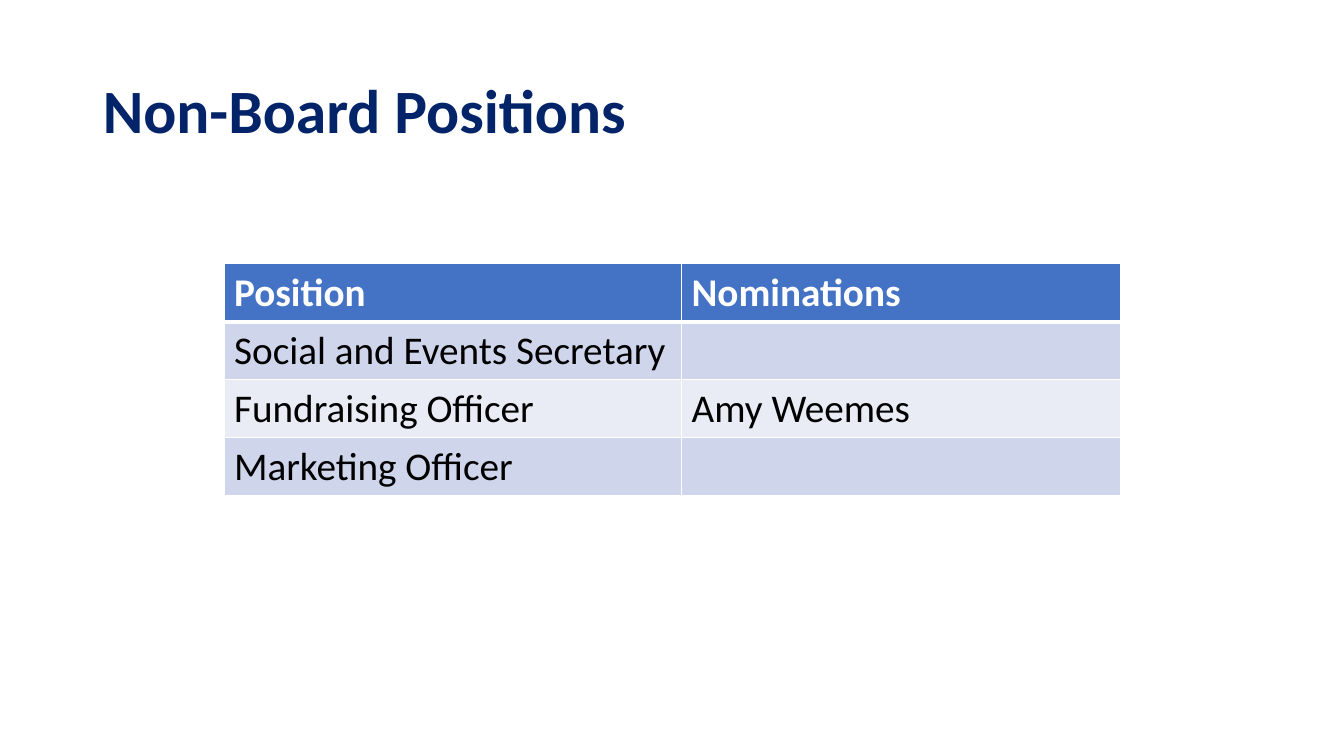
from lxml.etree import SubElement
from pptx import Presentation
from pptx.dml.color import RGBColor
from pptx.enum.text import MSO_ANCHOR, PP_ALIGN
from pptx.oxml.ns import qn
from pptx.util import Inches, Pt

NAVY = RGBColor(0x03, 0x24, 0x69)
BLUE = RGBColor(0x44, 0x72, 0xC4)
BAND_DARK = RGBColor(0xCF, 0xD5, 0xEA)
BAND_LIGHT = RGBColor(0xE9, 0xEB, 0xF5)
WHITE = RGBColor(0xFF, 0xFF, 0xFF)
BLACK = RGBColor(0x00, 0x00, 0x00)

POSITIONS = [
    ("Position", "Nominations"),
    ("Social and Events Secretary", ""),
    ("Fundraising Officer", "Amy Weemes"),
    ("Marketing Officer", ""),
]


class SlideBuilder:
    """Style and current slide; lengths are percentages of the slide's size."""

    font_name = "Calibri"
    title_size = 44
    table_size = 28

    def __init__(self, prs):
        self.width, self.height = prs.slide_width, prs.slide_height
        self.slide = prs.slides.add_slide(prs.slide_layouts[5])

    def x(self, share):
        return int(self.width * share / 100)

    def y(self, share):
        return int(self.height * share / 100)

    def style(self, p, size, color, bold):
        p.alignment = PP_ALIGN.LEFT
        p.font.name = self.font_name
        p.font.size = Pt(size)
        p.font.bold = bold
        p.font.color.rgb = color

    def title(self, text, left, top, width, height):
        sp = self.slide.shapes.title
        sp.left, sp.top = self.x(left), self.y(top)
        sp.width, sp.height = self.x(width), self.y(height)
        tf = sp.text_frame
        tf.text = text
        tf.word_wrap = True
        tf.vertical_anchor = MSO_ANCHOR.MIDDLE
        p = tf.paragraphs[0]
        p.line_spacing = 0.9
        self.style(p, self.title_size, NAVY, True)

    def borders(self, cell, **widths):
        tc_pr = cell._tc.get_or_add_tcPr()
        for side, width in widths.items():
            ln = SubElement(tc_pr, qn(f"a:ln{side}"), w=str(Pt(width)))
            fill = SubElement(ln, qn("a:solidFill"))
            SubElement(fill, qn("a:srgbClr"), val=str(WHITE))

    def table(self, rows, left, top, col_widths, row_height):
        table = self.slide.shapes.add_table(
            len(rows), len(col_widths), self.x(left), self.y(top),
            self.x(sum(col_widths)), self.y(row_height * len(rows))).table
        for column, width in zip(table.columns, col_widths):
            column.width = self.x(width)
        for i, values in enumerate(rows):
            table.rows[i].height = self.y(row_height)
            header = i == 0
            band = BLUE if header else BAND_DARK if i % 2 else BAND_LIGHT
            for cell, text in zip(table.rows[i].cells, values):
                # Borders come before the fill in the cell properties
                self.borders(cell, L=1, R=1, T=3 if i == 1 else 1,
                             B=3 if header else 1)
                cell.fill.solid()
                cell.fill.fore_color.rgb = band
                if text:
                    cell.text = text
                self.style(cell.text_frame.paragraphs[0], self.table_size,
                           WHITE if header else BLACK, header)


def main():
    prs = Presentation()
    prs.slide_width, prs.slide_height = Inches(13.33), Inches(7.5)
    s = SlideBuilder(prs)

    # Heading
    s.title("Non-Board Positions", 6.9, 5.33, 86.25, 19.33)

    # Positions and their nominations
    s.table(POSITIONS, 16.67, 34.9, (34.05, 32.65), 7.6)

    prs.save("out.pptx")


if __name__ == "__main__":
    main()
